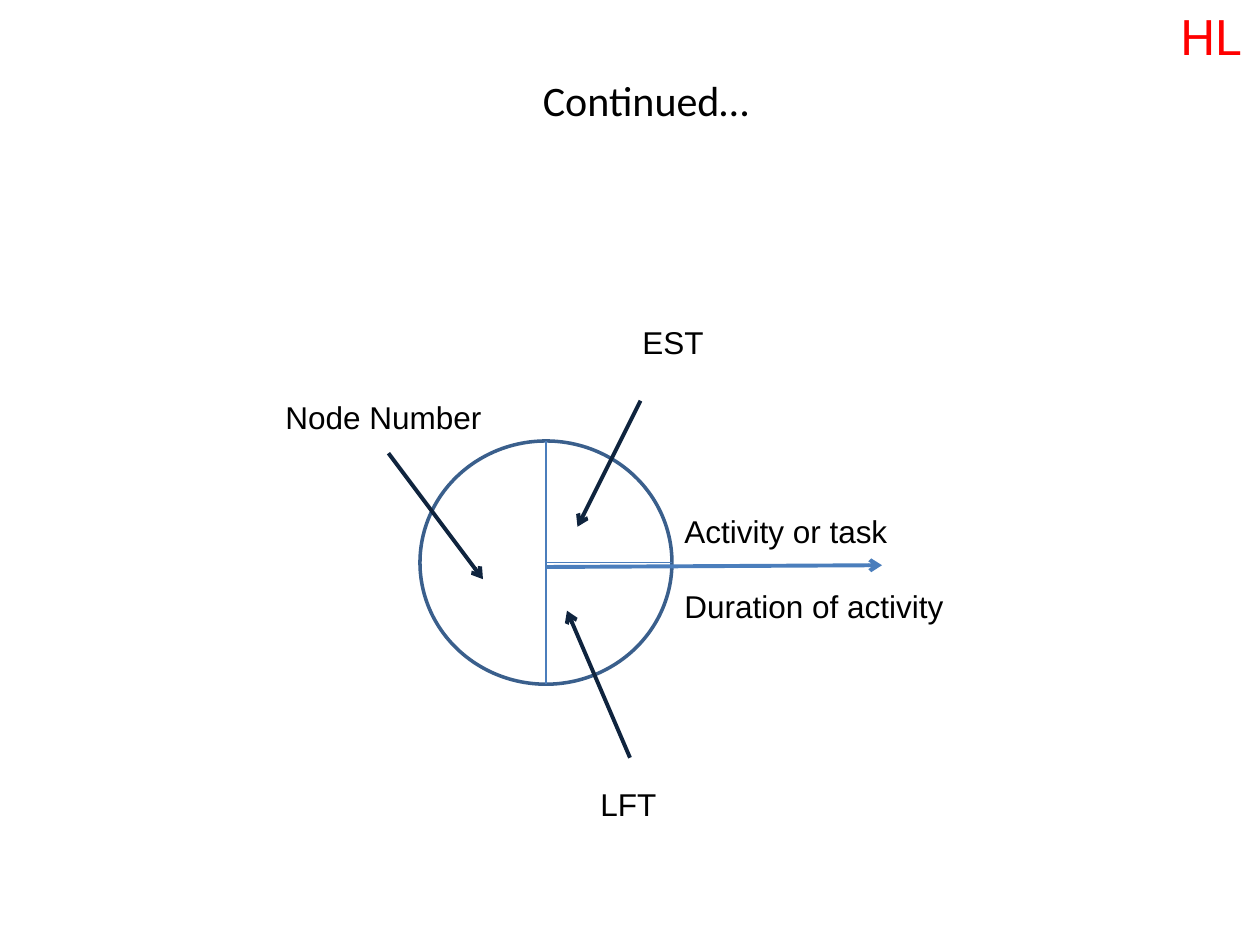
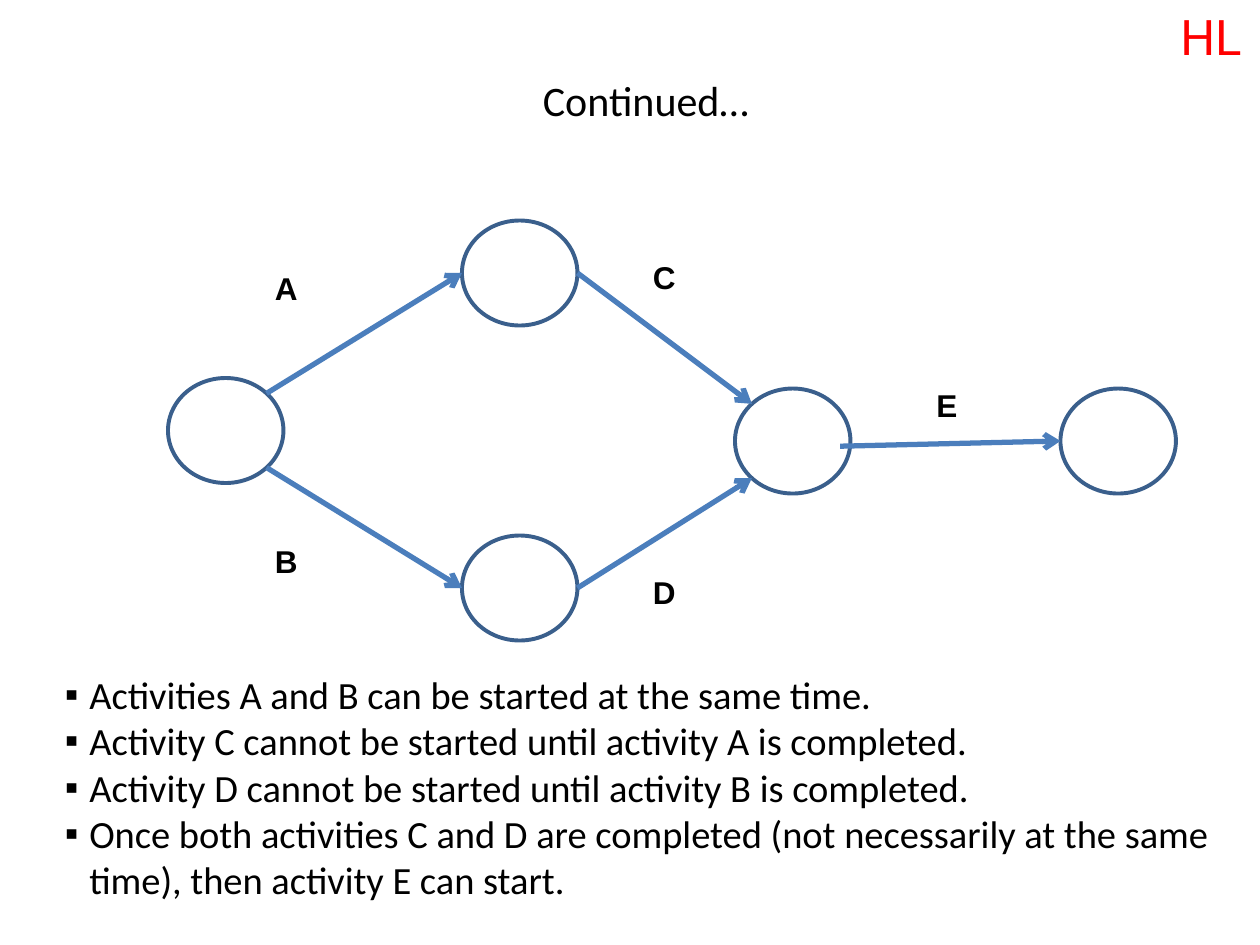
from math import sqrt
from lxml.etree import SubElement
from pptx import Presentation
from pptx.dml.color import RGBColor
from pptx.enum.shapes import MSO_CONNECTOR, MSO_SHAPE
from pptx.enum.text import MSO_ANCHOR, PP_ALIGN
from pptx.oxml.ns import qn
from pptx.util import Pt

BLACK = RGBColor(0, 0, 0)
WHITE = RGBColor(255, 255, 255)
RED = RGBColor(255, 0, 0)
RIM = RGBColor(0x3A, 0x5F, 0x8C)
BLUE = RGBColor(0x4B, 0x7E, 0xBC)
NAVY = RGBColor(0x0F, 0x24, 0x3E)

# Content: slide 1, a node and its parts (lengths in points)
DISC = (240, 252, 144, 139)
NOTES = [  # words, left, top, width
    ("EST", 360, 181, 54),
    ("LFT", 336, 445, 54),
    ("Node Number", 156, 224, 132),
    ("Activity or task", 384, 289, 204),
    ("Duration of activity", 384, 332, 204),
]
HINTS = [  # from, to
    ((366, 229), (330, 301)),
    ((360, 433), (324, 349)),
    ((222, 259), (276, 331)),
]
TASK = ((312, 324), (504, 323))

# Content: slide 2, the activity network
WIDE, HIGH = 66, 60
NODES = {  # left, top
    "start": (96, 216),
    "upper": (264, 126),
    "lower": (264, 306),
    "merge": (420, 222),
    "end": (606, 222),
}
DIAG = 1 / sqrt(2)
SITES = {  # place on the rim, in radii from the centre
    "left": (-1, 0), "right": (1, 0),
    "NE": (DIAG, -DIAG), "SE": (DIAG, DIAG),
    "NW": (-DIAG, -DIAG), "SW": (-DIAG, DIAG),
    "inner": (0.82, 0.1),
}
TASKS = [  # name, from, to, label left and top
    ("A", "start", "NE", "upper", "left", 150, 150),
    ("C", "upper", "right", "merge", "NW", 366, 144),
    ("B", "start", "SE", "lower", "left", 150, 306),
    ("D", "lower", "right", "merge", "SW", 366, 324),
    ("E", "merge", "inner", "end", "left", 528, 217),
]
RULES = [
    "Activities A and B can be started at the same time.",
    "Activity C cannot be started until activity A is completed.",
    "Activity D cannot be started until activity B is completed.",
    "Once both activities C and D are completed (not necessarily at the same "
    "time), then activity E can start.",
]


def add_text(slide, box, lines, size=18, font="Arial", color=BLACK,
             bold=False, align=PP_ALIGN.LEFT, anchor=MSO_ANCHOR.TOP, mark=None):
    frame = slide.shapes.add_textbox(*map(Pt, box)).text_frame
    frame.word_wrap = True
    frame.vertical_anchor = anchor
    for i, line in enumerate(lines):
        para = frame.paragraphs[0] if i == 0 else frame.add_paragraph()
        para.alignment = align
        run = para.add_run()
        run.text = line
        run.font.size, run.font.name, run.font.bold = Pt(size), font, bold
        run.font.color.rgb = color
        if mark:  # hanging bullet
            props = para._p.get_or_add_pPr()
            props.set("marL", str(Pt(14)))
            props.set("indent", str(-Pt(14)))
            SubElement(props, qn("a:buFont"), typeface="Arial")
            SubElement(props, qn("a:buChar"), char=mark)


def add_disc(slide, box, kind, width):
    disc = slide.shapes.add_shape(kind, *map(Pt, box))
    disc.shadow.inherit = False
    disc.fill.solid()
    disc.fill.fore_color.rgb = WHITE
    disc.line.color.rgb = RIM
    disc.line.width = Pt(width)


def add_line(slide, start, end, color, width, arrow=True):
    line = slide.shapes.add_connector(
        MSO_CONNECTOR.STRAIGHT, *(Pt(v) for v in (*start, *end)))
    line.line.color.rgb = color
    line.line.width = Pt(width)
    if arrow:
        SubElement(line.line._get_or_add_ln(), qn("a:tailEnd"), type="arrow")
    SubElement(line._element.spPr, qn("a:effectLst"))


def add_page(deck):
    # Shared corner tag and title
    slide = deck.slides.add_slide(deck.slide_layouts[6])
    add_text(slide, (664, 0, 56, 41), ["HL"], 28, "Roboto", RED,
             align=PP_ALIGN.CENTER)
    add_text(slide, (48, 18, 642, 78), ["Continued…"], 24, "Calibri",
             align=PP_ALIGN.CENTER, anchor=MSO_ANCHOR.MIDDLE)
    return slide


def rim(node, site):
    (x, y), (dx, dy) = NODES[node], SITES[site]
    return x + WIDE / 2 * (1 + dx), y + HIGH / 2 * (1 + dy)


def add_key(deck):
    slide = add_page(deck)
    # Split node
    x, y, w, h = DISC
    mid = (x + w / 2, y + h / 2)
    add_disc(slide, DISC, MSO_SHAPE.FLOWCHART_CONNECTOR, 2)
    add_line(slide, (mid[0], y), (mid[0], y + h), BLUE, 0.75, False)
    add_line(slide, (x + w, mid[1]), mid, BLUE, 0.75, False)
    # Arrows and labels
    for start, end in HINTS:
        add_line(slide, start, end, NAVY, 2.25)
    add_line(slide, *TASK, BLUE, 2.25)
    for words, left, top, width in NOTES:
        add_text(slide, (left, top, width, 29), [words])


def add_net(deck):
    slide = add_page(deck)
    # Nodes
    for spot in NODES.values():
        add_disc(slide, (*spot, WIDE, HIGH), MSO_SHAPE.OVAL, 2.25)
    # Activities
    for name, tail, out, head, into, left, top in TASKS:
        add_line(slide, rim(tail, out), rim(head, into), BLUE, 3)
        add_text(slide, (left, top, 54, 29), [name], bold=True)
    # Rules
    add_text(slide, (30, 380, 678, 140), RULES, 22, "Calibri", mark="▪")


def main():
    deck = Presentation()
    deck.slide_width, deck.slide_height = Pt(720), Pt(540)
    add_key(deck)
    add_net(deck)
    deck.save("out.pptx")


if __name__ == "__main__":
    main()
